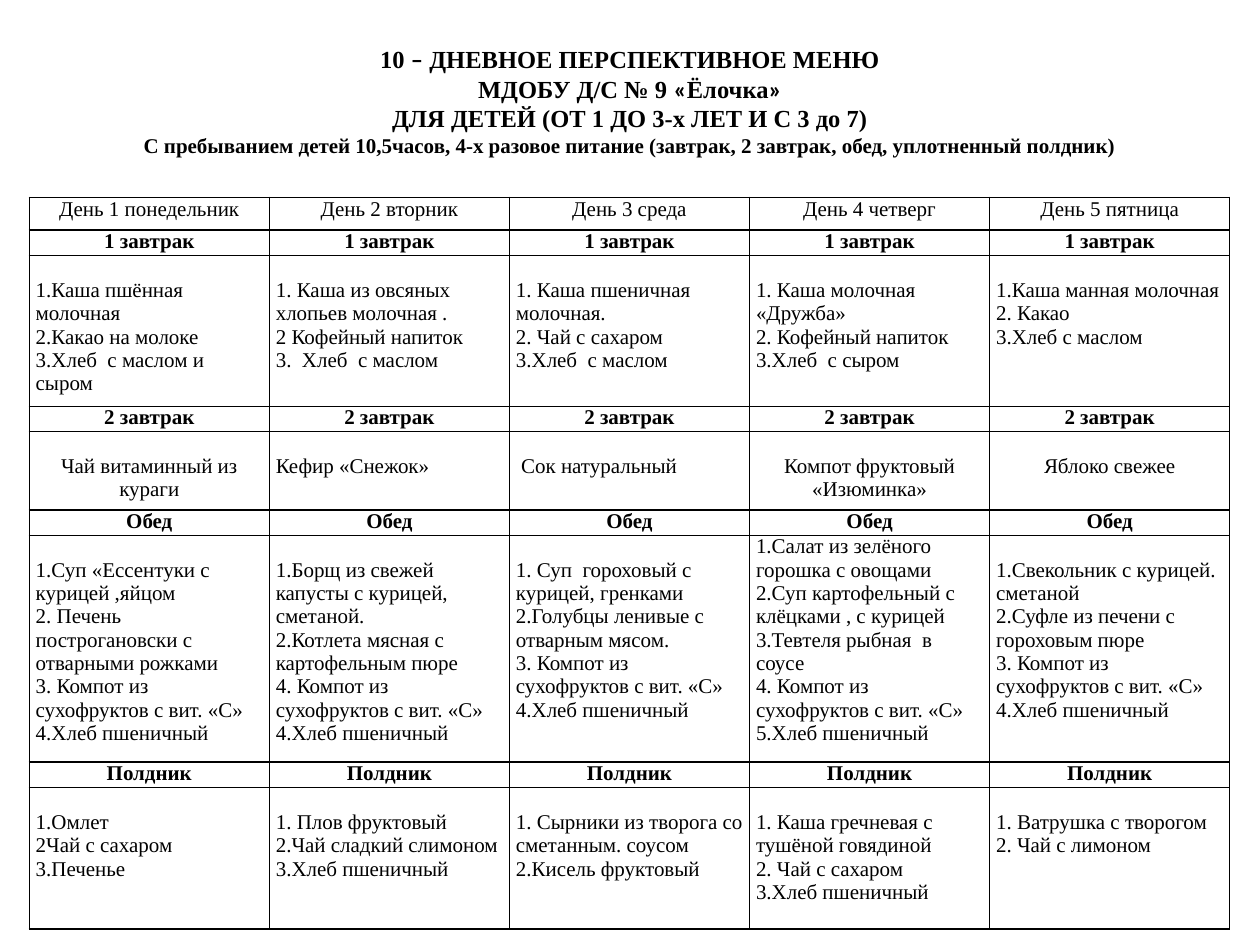
from itertools import groupby

from lxml import etree
from pptx import Presentation
from pptx.dml.color import RGBColor
from pptx.enum import text
from pptx.oxml import ns
from pptx.util import Cm, Pt

SERIF = "Times New Roman"
BLACK = "000000"
LINE_HEIGHT = Cm(0.47)
ROW_HEIGHTS = [0.66, 0.51, 3.04, 0.51, 1.58, 0.51, 4.56, 0.51, 2.85]
COLUMN_WIDTH = 4.84

COMPOTE = "Компот из сухофруктов с вит. «С»"
BREAD = "Хлеб пшеничный"

HEADING = [
    ("10 – ДНЕВНОЕ ПЕРСПЕКТИВНОЕ МЕНЮ", "–", 14),
    ("МДОБУ Д/С № 9 «Ёлочка»", "«»", 14),
    ("ДЛЯ ДЕТЕЙ (ОТ 1 ДО 3-х ЛЕТ И С 3 до 7)", "", 14),
    ("С пребыванием детей 10,5часов, 4-х разовое питание "
     "(завтрак, 2 завтрак, обед, уплотненный полдник)", "", 12),
]

DAYS = ["День 1 понедельник", "День 2 вторник", "День 3 среда",
        "День 4 четверг", "День 5 пятница"]

MEALS = {
    "1 завтрак": [
        ["1.Каша пшённая молочная", "2.Какао на молоке", "3.Хлеб  с маслом и сыром"],
        ["1. Каша из овсяных хлопьев молочная .", "2 Кофейный напиток",
         "3.  Хлеб  с маслом"],
        ["1. Каша пшеничная молочная.", "2. Чай с сахаром", "3.Хлеб  с маслом"],
        ["1. Каша молочная «Дружба»", "2. Кофейный напиток 3.Хлеб  с сыром"],
        ["1.Каша манная молочная", "2. Какао", "3.Хлеб с маслом"],
    ],
    "2 завтрак": [
        ["Чай витаминный из кураги"],
        ["Кефир «Снежок»"],
        [" Сок натуральный"],
        ["Компот фруктовый «Изюминка»"],
        ["Яблоко свежее"],
    ],
    "Обед": [
        ["1.Суп «Ессентуки с курицей ,яйцом",
         "2. Печень построгановски с отварными рожками",
         f"3. {COMPOTE}", f"4.{BREAD}"],
        ["1.Борщ из свежей капусты с курицей, сметаной.", "2.Котлета мясная с",
         "картофельным пюре", f"4. {COMPOTE}", f"4.{BREAD}"],
        ["1. Суп  гороховый с курицей, гренками",
         "2.Голубцы ленивые с отварным мясом.", f"3. {COMPOTE}", f"4.{BREAD}"],
        ["1.Салат из зелёного горошка с овощами",
         "2.Суп картофельный с клёцками , с курицей",
         "3.Тевтеля рыбная  в соусе", f"4. {COMPOTE}", f"5.{BREAD}"],
        ["1.Свекольник с курицей.", "сметаной",
         "2.Суфле из печени с гороховым пюре", f"3. {COMPOTE}", f"4.{BREAD}"],
    ],
    "Полдник": [
        ["1.Омлет", "2Чай с сахаром", "3.Печенье"],
        ["1. Плов фруктовый", "2.Чай сладкий слимоном", f"3.{BREAD}"],
        ["1. Сырники из творога со сметанным. соусом", "2.Кисель фруктовый"],
        ["1. Каша гречневая с тушёной говядиной", "2. Чай с сахаром", f"3.{BREAD}"],
        ["1. Ватрушка с творогом", "2. Чай с лимоном"],
    ],
}

CENTERED_DISHES = {("2 завтрак", 0), ("2 завтрак", 3), ("2 завтрак", 4)}
FULL_HEIGHT_DISHES = {("Обед", 3)}


def rgb(code):
    return RGBColor.from_string(code)


def write(paragraph, words, size=12, bold=False, centered=False, calibri_marks=""):
    paragraph.alignment = (text.PP_ALIGN.CENTER if centered
                           else text.PP_ALIGN.LEFT)
    for is_mark, letters in groupby(words, lambda letter: letter in calibri_marks):
        run = paragraph.add_run()
        run.text = "".join(letters)
        run.font.name = "Calibri" if is_mark else SERIF
        run.font.size = Pt(size)
        run.font.bold = bold
        run.font.color.rgb = rgb(BLACK)


def paragraphs(frame, count):
    return [frame.paragraphs[0]] + [frame.add_paragraph() for _ in range(count - 1)]


def add_heading(slide):
    heading = slide.shapes.add_textbox(Cm(0), Cm(1.4), Cm(25.4), Cm(1.27))
    frame = heading.text_frame
    frame.word_wrap = False
    frame.auto_size = text.MSO_AUTO_SIZE.SHAPE_TO_FIT_TEXT
    frame.vertical_anchor = text.MSO_ANCHOR.MIDDLE
    for paragraph, (words, marks, size) in zip(paragraphs(frame, len(HEADING)), HEADING):
        write(paragraph, words, size=size, bold=True, centered=True,
              calibri_marks=marks)


def add_borders(cell):
    properties = cell._tc.get_or_add_tcPr()
    for position, side in enumerate(("lnL", "lnR", "lnT", "lnB")):
        border = etree.Element(ns.qn(f"a:{side}"), w=str(Pt(1)))
        fill = etree.SubElement(border, ns.qn("a:solidFill"))
        etree.SubElement(fill, ns.qn("a:srgbClr"), val=BLACK)
        properties.insert(position, border)


def fill_cell(cell, lines, top=0, **style):
    cell.margin_left = cell.margin_right = Cm(0.13)
    cell.margin_top, cell.margin_bottom = top, 0
    cell.fill.background()
    add_borders(cell)
    for paragraph, line in zip(paragraphs(cell.text_frame, len(lines)), lines):
        write(paragraph, line, **style)


def add_menu(slide):
    menu = slide.shapes.add_table(
        len(ROW_HEIGHTS), len(DAYS), Cm(0.59), Cm(3.98),
        Cm(COLUMN_WIDTH * len(DAYS)), Cm(sum(ROW_HEIGHTS))).table
    menu.first_row = menu.horz_banding = False
    for column in menu.columns:
        column.width = Cm(COLUMN_WIDTH)
    for row, height in zip(menu.rows, ROW_HEIGHTS):
        row.height = Cm(height)

    for day, name in enumerate(DAYS):
        fill_cell(menu.cell(0, day), [name], centered=True)
        for number, (meal, dishes) in enumerate(MEALS.items()):
            title_row = 1 + 2 * number
            fill_cell(menu.cell(title_row, day), [meal], bold=True, centered=True)
            fill_cell(menu.cell(title_row + 1, day), dishes[day],
                      top=0 if (meal, day) in FULL_HEIGHT_DISHES else LINE_HEIGHT,
                      centered=(meal, day) in CENTERED_DISHES)


def main():
    deck = Presentation()
    deck.slide_width, deck.slide_height = Cm(25.4), Cm(19.05)
    slide = deck.slides.add_slide(deck.slide_layouts[6])
    add_heading(slide)
    add_menu(slide)
    deck.save("out.pptx")


if __name__ == "__main__":
    main()
